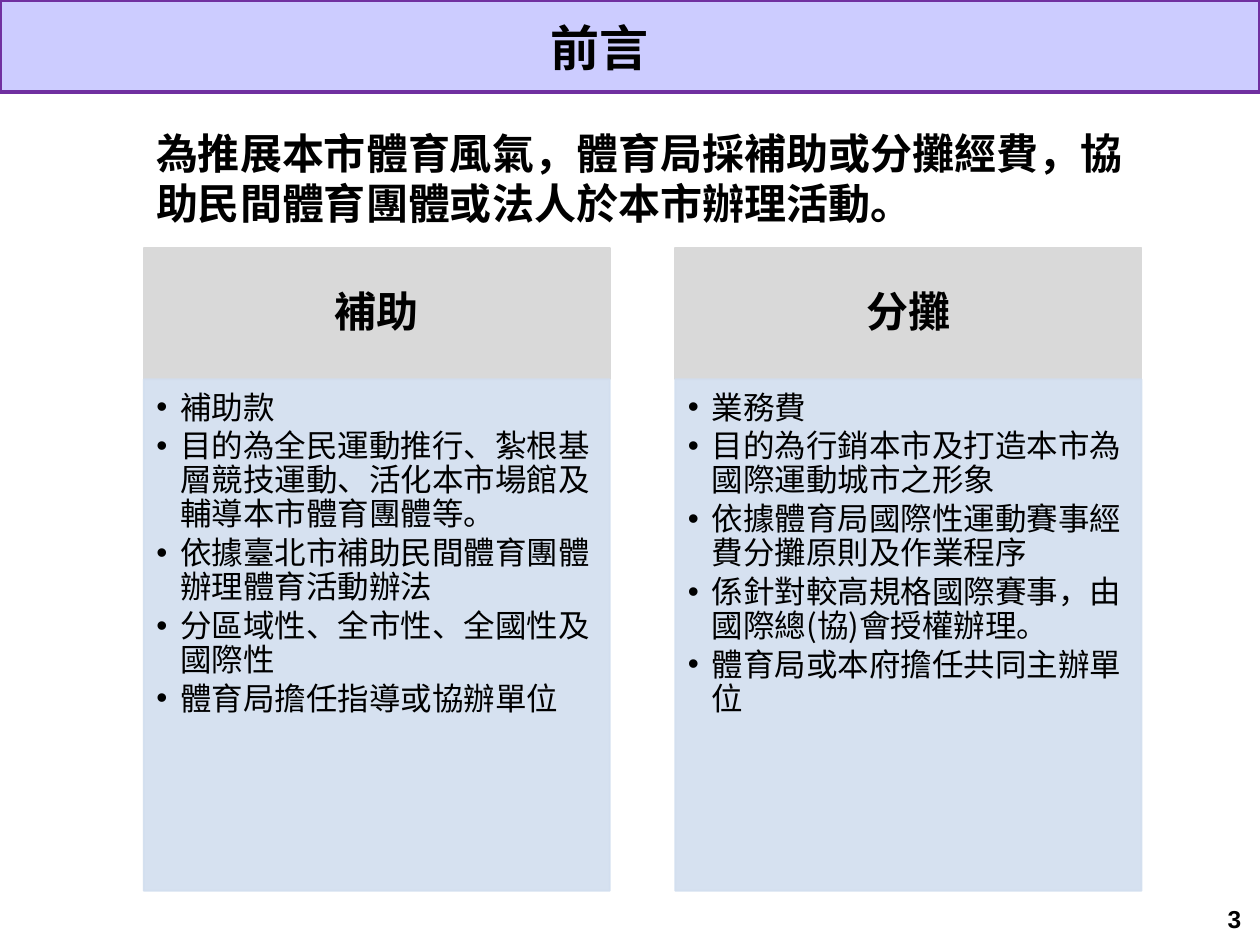
from dataclasses import dataclass

import pptx
import pptx.dml.color
import pptx.enum.shapes
import pptx.enum.text
import pptx.oxml
import pptx.oxml.ns
import pptx.util
from pptx.util import Inches, Pt

ALIGN = pptx.enum.text.PP_ALIGN
ANCHOR = pptx.enum.text.MSO_ANCHOR


@dataclass(frozen=True)
class Theme:
    font: str = "Noto Sans CJK SC"
    number_font: str = "Arial"
    ink: str = "000000"
    banner: str = "CCCCFF"
    banner_line: str = "7030A0"
    head: str = "D9D9D9"
    panel: str = "D2DEEF"
    title_size: int = 28
    lead_size: int = 24
    body_size: int = 18
    number_size: int = 14


THEME = Theme()

# Panel grid
LEFT, TOP, WIDTH, GAP = 1.14, 1.97, 3.7, 0.52
HEAD_H, LIST_H = 1.04, 4.06

LEAD = "為推展本市體育風氣，體育局採補助或分攤經費，協助民間體育團體或法人於本市辦理活動。"
PANELS = [
    ("補助", [
        "補助款",
        "目的為全民運動推行、紮根基層競技運動、活化本市場館及輔導本市體育團體等。",
        "依據臺北市補助民間體育團體辦理體育活動辦法",
        "分區域性、全市性、全國性及國際性",
        "體育局擔任指導或協辦單位",
    ]),
    ("分攤", [
        "業務費",
        "目的為行銷本市及打造本市為國際運動城市之形象",
        "依據體育局國際性運動賽事經費分攤原則及作業程序",
        "係針對較高規格國際賽事，由國際總(協)會授權辦理。",
        "體育局或本府擔任共同主辦單位",
    ]),
]


def rgb(value):
    return pptx.dml.color.RGBColor.from_string(value)


def place(sp, x, y, w, h):
    sp.left, sp.top, sp.width, sp.height = (Inches(v) for v in (x, y, w, h))


def paint(sp, fill, line, weight, opacity=100):
    sp.fill.solid()
    sp.fill.fore_color.rgb = rgb(fill)
    sp.line.color.rgb = rgb(line)
    sp.line.width = Pt(weight)
    if opacity < 100:
        for clr in sp._element.spPr.iter(pptx.oxml.ns.qn("a:srgbClr")):
            alpha = pptx.oxml.parse_xml(
                f'<a:alpha {pptx.oxml.ns.nsdecls("a")} val="{opacity * 1000}"/>')
            clr.append(alpha)


def write(sp, lines, size, bold=False, align=ALIGN.LEFT, anchor=ANCHOR.TOP,
          insets=(0.1, 0.05, 0.1, 0.05), font=THEME.font,
          spacing=1.0, before=0, after=0):
    """Fill a shape with paragraphs of one style."""
    tf = sp.text_frame
    tf.word_wrap = True
    tf.auto_size = pptx.enum.text.MSO_AUTO_SIZE.NONE
    tf.vertical_anchor = anchor
    (tf.margin_left, tf.margin_top,
     tf.margin_right, tf.margin_bottom) = (Inches(v) for v in insets)
    tf.text = "\n".join(lines)
    for p in tf.paragraphs:
        p.alignment = align
        p.line_spacing = spacing
        p.space_before, p.space_after = Pt(before), Pt(after)
        f = p.font
        f.size, f.bold, f.name = Pt(size), bold, font
        f.color.rgb = rgb(THEME.ink)
        # East Asian typeface
        f._element.append(pptx.oxml.parse_xml(
            f'<a:ea {pptx.oxml.ns.nsdecls("a")} typeface="{font}"/>'))


def add_banner(s):
    sp = s.shapes.add_shape(pptx.enum.shapes.MSO_SHAPE.RECTANGLE,
                            0, 0, Inches(10), Inches(0.73))
    sp.shadow.inherit = False
    paint(sp, THEME.banner, THEME.banner_line, 2)
    # Behind the title placeholder
    s.shapes._spTree.insert(2, sp._element)


def add_title(s, text):
    sp = s.shapes.title
    place(sp, 0.1, 0, 9.32, 0.9)
    write(sp, [text], THEME.title_size, bold=True, align=ALIGN.CENTER,
          spacing=Pt(40), before=6, after=6)


def add_text(s, box, text, size, **style):
    sp = s.shapes.add_textbox(*(Inches(v) for v in box))
    write(sp, [text], size, bold=True, **style)


def fill_panel(head, body, x, heading, items):
    place(head, x, TOP, WIDTH, HEAD_H)
    paint(head, THEME.head, THEME.head, 1)
    write(head, [heading], THEME.lead_size, bold=True, align=ALIGN.CENTER,
          anchor=ANCHOR.MIDDLE, insets=(0.19, 0.11, 0.19, 0.11),
          spacing=0.9, after=8.4)

    place(body, x, TOP + HEAD_H, WIDTH, LIST_H)
    paint(body, THEME.panel, THEME.panel, 1, opacity=90)
    write(body, items, THEME.body_size, insets=(0.1, 0.1, 0.14, 0.16),
          spacing=0.9, after=2.7)
    # Hanging indent for the bullets
    for p in body.text_frame.paragraphs:
        pPr = p._p.get_or_add_pPr()
        pPr.set("marL", str(Inches(0.19)))
        pPr.set("indent", str(-Inches(0.19)))


def main():
    prs = pptx.Presentation()
    prs.slide_width, prs.slide_height = Inches(10), Inches(7.5)
    s = prs.slides.add_slide(prs.slide_layouts.get_by_name("Comparison"))

    # Title band
    add_banner(s)
    add_title(s, "前言")

    # Lead sentence
    add_text(s, (1.14, 0.96, 7.93, 0.91), LEAD, THEME.lead_size)

    # Two panels, each a heading and a list placeholder
    for i, (heading, items) in enumerate(PANELS):
        head, body = (s.placeholders[n] for n in (2 * i + 1, 2 * i + 2))
        fill_panel(head, body, LEFT + i * (WIDTH + GAP), heading, items)

    # Page number
    add_text(s, (7.62, 7.09, 2.33, 0.4), "3", THEME.number_size,
             align=ALIGN.RIGHT, anchor=ANCHOR.MIDDLE, font=THEME.number_font)

    prs.save("out.pptx")


if __name__ == "__main__":
    main()
